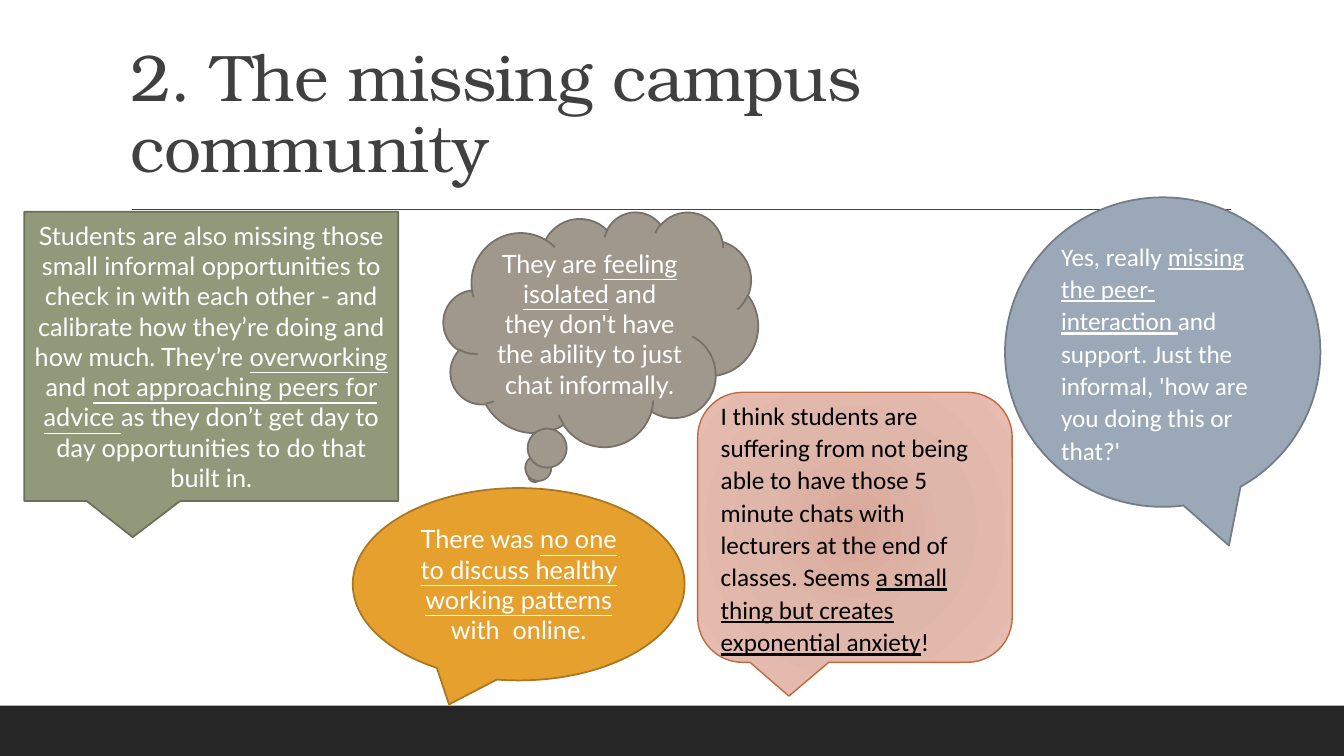
import pptx
import pptx.dml.color
import pptx.enum.shapes
import pptx.enum.text
import pptx.oxml
import pptx.oxml.ns
import pptx.util

SHAPE = pptx.enum.shapes.MSO_SHAPE
ALIGN = pptx.enum.text.PP_ALIGN
ANCHOR = pptx.enum.text.MSO_ANCHOR

COLORS = {
    "white": "FFFFFF", "black": "000000", "ink": "404040", "bar": "262626",
    "green": "92987A", "green_edge": "6C705A",
    "blue": "9BA8B7", "blue_edge": "737C87",
    "taupe": "A0988C", "taupe_edge": "767068",
    "orange": "E6A02E", "orange_edge": "AA7622",
    "rose_edge": "BF6A3B",
}
ROSE_STOPS = [(0, "D8A899"), (45, "DFB6AA"), (100, "E7BCB0")]


class Deck:
    columns, rows = 32, 18
    title_font, body_font, quote_font = "TeX Gyre Bonum", "Lato", "Calibri"

    def __init__(self):
        self.prs = pptx.Presentation()
        self.prs.slide_width = pptx.util.Inches(13.33)
        self.prs.slide_height = pptx.util.Inches(7.5)
        self.s = self.prs.slides.add_slide(self.prs.slide_layouts[6])

    def grid(self, *lengths):
        cells = (self.prs.slide_width / self.columns, self.prs.slide_height / self.rows)
        return [round(n * cells[i % 2]) for i, n in enumerate(lengths)]

    def color(self, name):
        return pptx.dml.color.RGBColor.from_string(COLORS[name])

    def style(self, r, font, size, color):
        r.font.name = font
        r.font.size = pptx.util.Pt(size)
        r.font.color.rgb = self.color(color)

    def title(self, box, text):
        tf = self.s.shapes.add_textbox(*self.grid(*box)).text_frame
        tf.word_wrap = True
        tf.vertical_anchor = ANCHOR.BOTTOM
        tf.text = text
        p = tf.paragraphs[0]
        p.line_spacing = 0.9
        r = p.runs[0]
        self.style(r, self.title_font, 47, "ink")
        r._r.get_or_add_rPr().set("spc", "-50")

    def rule(self, start, end):
        sp = self.s.shapes.add_connector(
            pptx.enum.shapes.MSO_CONNECTOR.STRAIGHT, *self.grid(*start, *end))
        sp.line.color.rgb = self.color("ink")
        sp.line.width = pptx.util.Pt(1)
        sp._element.spPr.append(pptx.oxml.parse_xml(
            f'<a:effectLst {pptx.oxml.ns.nsdecls("a")}/>'))

    def shape(self, kind, box, fill=None):
        sp = self.s.shapes.add_shape(kind, *self.grid(*box))
        sp.shadow.inherit = False
        sp.line.fill.background()
        if fill:
            sp.fill.solid()
            sp.fill.fore_color.rgb = self.color(fill)
        return sp

    def radial_fill(self, sp, stops):
        marks = "".join(f'<a:gs pos="{pos * 1000}"><a:srgbClr val="{color}"/></a:gs>'
                        for pos, color in stops)
        sp._element.spPr.prstGeom.addnext(pptx.oxml.parse_xml(
            f'<a:gradFill {pptx.oxml.ns.nsdecls("a")}><a:gsLst>{marks}</a:gsLst>'
            '<a:path path="circle"><a:fillToRect l="50000" t="50000" r="50000" b="50000"/>'
            '</a:path></a:gradFill>'))

    def callout(self, kind, box, text, edge, fill=None, weight=1.25,
                color="white", quote=False, tail=-0.21):
        sp = self.shape(kind, box, fill)
        sp.adjustments[0] = tail
        sp.line.color.rgb = self.color(edge)
        sp.line.width = pptx.util.Pt(weight)
        tf = sp.text_frame
        tf.word_wrap = True
        tf.vertical_anchor = ANCHOR.MIDDLE
        p = tf.paragraphs[0]
        p.alignment = ALIGN.LEFT if quote else ALIGN.CENTER
        if quote:
            p.line_spacing = 1.07
            p.space_after = pptx.util.Pt(8)
        for i, part in enumerate(text.split("_")):
            r = p.add_run()
            r.text = part
            self.style(r, self.quote_font if quote else self.body_font, 18, color)
            r.font.underline = i % 2 == 1
        return sp


def main():
    deck = Deck()
    deck.shape(SHAPE.RECTANGLE, (0, 16.8, 32, 1.2), "bar")
    deck.rule((3.14, 4.99), (29.3, 4.99))
    deck.title((2.88, 0.74, 26.4, 3.82), "2. The missing campus community")
    deck.callout(
        SHAPE.RECTANGULAR_CALLOUT, (0.58, 5.04, 8.9, 6.89),
        "Students are also missing those small informal opportunities to check in with "
        "each other - and calibrate how they’re doing and how much. They’re _overworking_ "
        "and _not approaching peers for advice _as they don’t get day to day "
        "opportunities to do that built in.",
        "green_edge", "green")
    deck.callout(
        SHAPE.OVAL_CALLOUT, (23.93, 4.7, 7.51, 7.37),
        "Yes, really _missing the peer-interaction _and support. Just the informal, "
        "'how are you doing this or that?'",
        "blue_edge", "blue", quote=True, tail=0.21)
    deck.callout(
        SHAPE.CLOUD_CALLOUT, (10.56, 5.04, 7.49, 5.59),
        "They are _feeling isolated_ and they don't have the ability to just chat "
        "informally.",
        "taupe_edge", "taupe")
    chats = deck.callout(
        SHAPE.ROUNDED_RECTANGULAR_CALLOUT, (16.61, 9.34, 7.49, 6.43),
        "I think students are suffering from not being able to have those 5 minute chats "
        "with lecturers at the end of classes. Seems _a small thing but creates "
        "exponential anxiety_!",
        "rose_edge", weight=1, color="black", quote=True)
    deck.radial_fill(chats, ROSE_STOPS)
    deck.callout(
        SHAPE.OVAL_CALLOUT, (8.4, 11.62, 7.9, 4.58),
        "There was _no one to discuss healthy working patterns _with  online.",
        "orange_edge", "orange")
    deck.prs.save("out.pptx")


if __name__ == "__main__":
    main()
